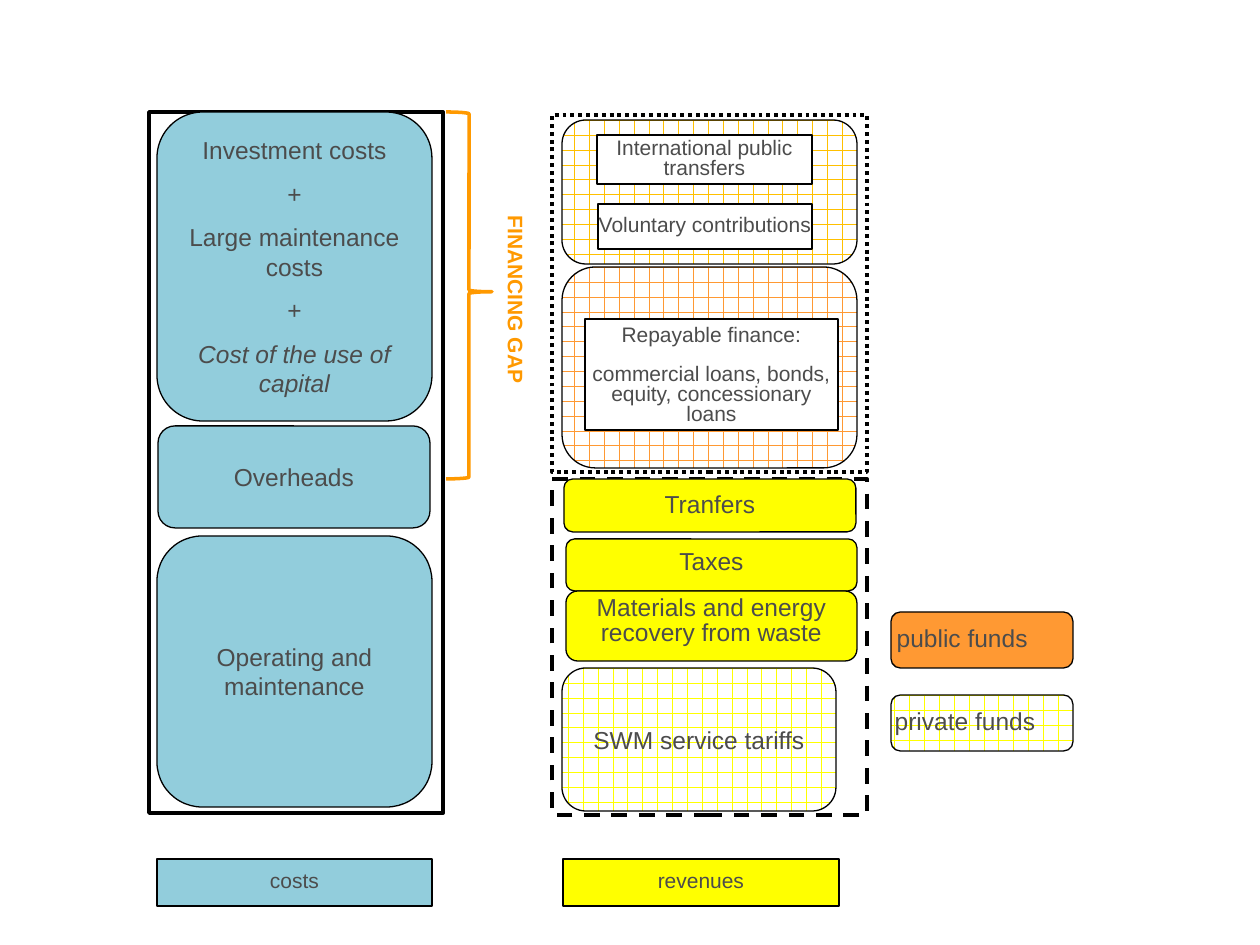
"""Builds a slide that sets waste management costs against the revenues that fund them."""
from pptx import Presentation, util as u
from pptx.dml.color import RGBColor
from pptx.enum import dml, shapes, text

PX = 914400 // 126
BLUE, YELLOW, ORANGE, AMBER = "92CDDC", "FFFF00", "FF9933", "FFC000"
WHITE, BLACK, GREY, GAP = "FFFFFF", "000000", "4C4C4C", "FF9900"
RECT, ROUND = shapes.MSO_SHAPE.RECTANGLE, shapes.MSO_SHAPE.ROUNDED_RECTANGLE
LEFT, CENTER = text.PP_ALIGN.LEFT, text.PP_ALIGN.CENTER
TOP, MIDDLE = text.MSO_ANCHOR.TOP, text.MSO_ANCHOR.MIDDLE
DASH, DOT = dml.MSO_LINE.DASH, dml.MSO_LINE.ROUND_DOT

FRAMES = [
    ((552, 479, 315, 336), None, DASH),
    ((149, 112, 294, 701), WHITE, None),
    ((552, 115, 315, 357), None, DOT),
]
HATCHED = [
    ((562, 267, 295, 201), ORANGE),
    ((562, 120, 295, 144), AMBER),
]
COSTS = ["Investment costs", "+", "Large maintenance costs", "+", "Cost of the use of capital"]
BLOCKS = [
    ((157, 112, 275, 309), BLUE, COSTS, dict(inset=(3, 6, 3, 6), before=2, after=6, italic_last=True)),
    ((158, 426, 272, 102), BLUE, ["Overheads"], {}),
    ((157, 536, 275, 271), BLUE, ["Operating and maintenance"], {}),
    ((564, 479, 292, 53), YELLOW, ["Tranfers"], dict(inset=(13, 1, 13, 1), spacing=[0.96])),
    ((566, 539, 291, 52), YELLOW, ["Taxes"], dict(anchor=TOP, spacing=[0.96])),
    ((566, 591, 291, 70), YELLOW, ["Materials and energy recovery from waste"],
     dict(anchor=TOP, inset=(13, 1, 13, 6), spacing=[0.88])),
    ((562, 668, 274, 143), YELLOW, ["SWM service tariffs"], dict(hatch=True)),
    ((891, 612, 182, 56), ORANGE, ["public funds"],
     dict(inset=(3, 0, 3, 1), spacing=[0.88], align=LEFT)),
    ((891, 695, 182, 56), YELLOW, ["private funds"],
     dict(hatch=True, inset=(1, 0, 1, 1), spacing=[0.88], align=LEFT)),
]
LABELS = [
    ((157, 859, 275, 47), BLUE, ["costs"], {}),
    ((563, 859, 276, 47), YELLOW, ["revenues"], {}),
    ((597, 135, 215, 49), WHITE, ["International public transfers"], dict(inset=(0, 0, 0, 0))),
    ((598, 204, 214, 45), WHITE, ["Voluntary contributions"], dict(inset=(0, 0, 0, 0), before=1)),
    ((585, 319, 253, 111), WHITE,
     ["Repayable finance:", "commercial loans, bonds, equity, concessionary loans"],
     dict(inset=(0, 0, 0, 0), spacing=[0.96, 0.8])),
]


def rgb(value):
    return RGBColor.from_string(value)


def add_shape(s, kind, box, fill=None, hatch=False, line=BLACK, width=0.75, dash=None):
    sp = s.shapes.add_shape(kind, *(v * PX for v in box))
    sp.shadow.inherit = False
    if fill is None:
        sp.fill.background()
    elif hatch:
        sp.fill.patterned()
        sp.fill.pattern = dml.MSO_PATTERN.HORIZONTAL_BRICK
        sp.fill.fore_color.rgb, sp.fill.back_color.rgb = rgb(fill), rgb(WHITE)
    else:
        sp.fill.solid()
        sp.fill.fore_color.rgb = rgb(fill)
    sp.line.color.rgb = rgb(line)
    sp.line.width = u.Pt(width)
    if dash:
        sp.line.dash_style = dash
    return sp


def write(sp, lines, size=14, color=GREY, bold=False, italic_last=False, align=CENTER,
          anchor=MIDDLE, inset=(13, 6, 13, 6), spacing=(1,), before=0, after=10):
    tf = sp.text_frame
    tf.word_wrap = True
    tf.vertical_anchor = anchor
    tf.margin_left, tf.margin_top, tf.margin_right, tf.margin_bottom = (v * PX for v in inset)
    for i, line in enumerate(lines):
        p = tf.add_paragraph() if i else tf.paragraphs[0]
        p.alignment = align
        p.line_spacing = spacing[min(i, len(spacing) - 1)]
        p.space_before, p.space_after = u.Pt(before), u.Pt(after)
        r = p.add_run()
        r.text = line
        r.font.name, r.font.size, r.font.bold = "Arial", u.Pt(size), bold
        r.font.italic = italic_last and i == len(lines) - 1
        r.font.color.rgb = rgb(color)
    return tf


def main():
    prs = Presentation()
    prs.slide_width, prs.slide_height = u.Inches(10), u.Inches(7.5)
    s = prs.slides.add_slide(prs.slide_layouts[6])
    for box, fill, dash in FRAMES:
        add_shape(s, RECT, box, fill, width=2.25, dash=dash)
    for box, fill in HATCHED:
        add_shape(s, ROUND, box, fill, hatch=True)
    for box, fill, lines, style in BLOCKS:
        form = dict(style)
        sp = add_shape(s, ROUND, box, fill, hatch=form.pop("hatch", False))
        write(sp, lines, **form)
    for box, fill, lines, style in LABELS:
        write(add_shape(s, RECT, box, fill), lines, **{"size": 12, "spacing": [0.8], **style})

    brace = add_shape(s, shapes.MSO_SHAPE.RIGHT_BRACE, (446, 112, 46, 367), line=GAP, width=2)
    brace.adjustments[0], brace.adjustments[1] = 0.04, 0.49
    gap = s.shapes.add_textbox(*(v * PX for v in (481, 120, 68, 359)))
    tf = write(gap, ["FINANCING GAP"], size=12, color=GAP, bold=True,
               inset=(0, 0, 0, 0), spacing=[0.96])
    tf._txBody.bodyPr.set("vert", "vert")
    prs.save("out.pptx")


if __name__ == "__main__":
    main()
